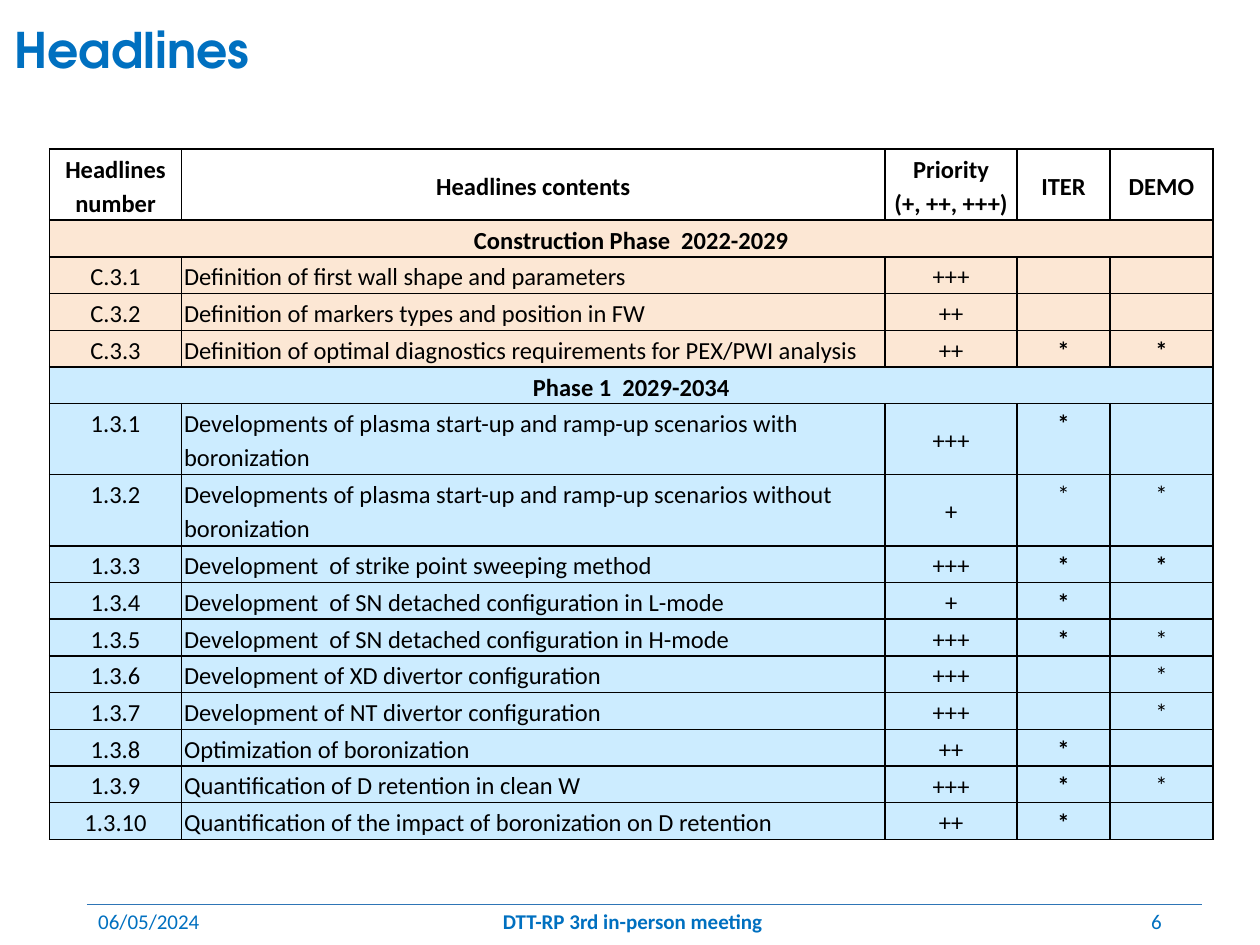
import pptx
import pptx.dml.color
import pptx.enum.shapes
import pptx.enum.text
import pptx.oxml
import pptx.oxml.ns
import pptx.util

Pt = pptx.util.Pt
ALIGN = pptx.enum.text.PP_ALIGN
ANCHOR = pptx.enum.text.MSO_ANCHOR

BLUE = pptx.dml.color.RGBColor(0x00, 0x70, 0xC0)
RULE_BLUE = pptx.dml.color.RGBColor(0x2E, 0x75, 0xB6)
BLACK = pptx.dml.color.RGBColor(0x00, 0x00, 0x00)
PEACH = pptx.dml.color.RGBColor(0xFC, 0xE7, 0xD4)
SKY = pptx.dml.color.RGBColor(0xCC, 0xEC, 0xFF)


def set_values(target, values):
    for name, value in values.items():
        setattr(target, name, value)


def write(frame, text, color, font, paragraph_format):
    frame.text = text
    for paragraph in frame.paragraphs:
        set_values(paragraph, paragraph_format)
        for run in paragraph.runs:
            set_values(run.font, font)
            run.font.color.rgb = color
        if not paragraph.runs:
            paragraph._p.get_or_add_endParaRPr().set("sz", str(int(font["size"].pt * 100)))


deck = pptx.Presentation()
set_values(deck, {"slide_width": Pt(720), "slide_height": Pt(540)})
slide = deck.slides.add_slide(deck.slide_layouts[5])

footer_rule = slide.shapes.add_connector(
    pptx.enum.shapes.MSO_CONNECTOR.STRAIGHT, Pt(49.7), Pt(517), Pt(687), Pt(517))
footer_rule.line.width = Pt(0.5)
footer_rule.line.color.rgb = RULE_BLUE
footer_rule._element.spPr.append(pptx.oxml.parse_xml(
    f"<a:effectLst {pptx.oxml.ns.nsdecls('a')}/>"))

footers = [
    ("06/05/2024", 49, 162, ALIGN.LEFT, False),
    ("DTT-RP 3rd in-person meeting", 240, 243, ALIGN.CENTER, True),
    ("6", 509, 162, ALIGN.RIGHT, False),
]
for text, left, width, alignment, bold in footers:
    footer = slide.shapes.add_textbox(Pt(left), Pt(512), Pt(width), Pt(28.8))
    set_values(footer.text_frame, {"word_wrap": True, "vertical_anchor": ANCHOR.MIDDLE})
    write(footer.text_frame, text, BLUE,
          {"name": "Calibri", "size": Pt(12), "bold": bold}, {"alignment": alignment})

title = slide.shapes.title
set_values(title, {"left": Pt(1), "top": Pt(1.5), "width": Pt(561), "height": Pt(57)})
set_values(title.text_frame, {"word_wrap": True, "vertical_anchor": ANCHOR.MIDDLE})
write(title.text_frame, "Headlines", BLUE,
      {"name": "TeX Gyre Adventor", "size": Pt(28), "bold": True},
      {"alignment": ALIGN.LEFT, "line_spacing": 0.9})

header = ("Headlines\nnumber", "Headlines contents", "Priority\n(+, ++, +++)", "ITER", "DEMO")
phases = [
    ("Construction Phase  2022-2029", PEACH, [
        ("C.3.1", "Definition of first wall shape and parameters", "+++", "", ""),
        ("C.3.2", "Definition of markers types and position in FW", "++", "", ""),
        ("C.3.3", "Definition of optimal diagnostics requirements for PEX/PWI analysis",
         "++", "*", "*"),
    ]),
    ("Phase 1  2029-2034", SKY, [
        ("1.3.1", "Developments of plasma start-up and ramp-up scenarios with boronization",
         "+++", "*", ""),
        ("1.3.2", "Developments of plasma start-up and ramp-up scenarios without boronization",
         "+", "*", "*"),
        ("1.3.3", "Development  of strike point sweeping method", "+++", "*", "*"),
        ("1.3.4", "Development  of SN detached configuration in L-mode", "+", "*", ""),
        ("1.3.5", "Development  of SN detached configuration in H-mode", "+++", "*", "*"),
        ("1.3.6", "Development of XD divertor configuration", "+++", "", "*"),
        ("1.3.7", "Development of NT divertor configuration", "+++", "", "*"),
        ("1.3.8", "Optimization of boronization", "++", "*", ""),
        ("1.3.9", "Quantification of D retention in clean W", "+++", "*", "*"),
        ("1.3.10", "Quantification of the impact of boronization on D retention",
         "++", "*", ""),
    ]),
]
NUMBER, CONTENTS, PRIORITY, ITER, DEMO = range(5)
REGULAR_ITER = {"1.3.2"}
BOLD_DEMO = {"C.3.3", "1.3.3"}
TALL_ROWS = {header[NUMBER], "1.3.1", "1.3.2"}

rows = [(header, None, True)]
for phase, color, headlines in phases:
    rows.append(((phase, "", "", "", ""), color, True))
    rows += [(headline, color, False) for headline in headlines]

column_widths = [75.5, 402, 75.5, 53, 59]
row_heights = [40.6 if values[NUMBER] in TALL_ROWS else 21 for values, _, _ in rows]
headlines_table = slide.shapes.add_table(
    len(rows), len(column_widths), Pt(28.3), Pt(85.2),
    Pt(sum(column_widths)), Pt(sum(row_heights))).table
set_values(headlines_table, {"first_row": False, "horz_banding": False})
for column, width in zip(headlines_table.columns, column_widths):
    column.width = Pt(width)

cell_margins = {"margin_left": Pt(1.4), "margin_right": Pt(1.4),
                "margin_top": Pt(0.7), "margin_bottom": Pt(0.7)}
for row, (values, color, is_heading) in enumerate(rows):
    headlines_table.rows[row].height = Pt(row_heights[row])
    if is_heading and color:
        headlines_table.cell(row, NUMBER).merge(headlines_table.cell(row, DEMO))
    for column, text in enumerate(values):
        cell = headlines_table.cell(row, column)
        centred = is_heading or column == PRIORITY
        set_values(cell, {**cell_margins,
                          "vertical_anchor": ANCHOR.MIDDLE if centred else ANCHOR.TOP})
        bold = (is_heading
                or column == ITER and values[NUMBER] not in REGULAR_ITER
                or column == DEMO and values[NUMBER] in BOLD_DEMO)
        left_aligned = column == CONTENTS and not is_heading
        write(cell.text_frame, text, BLACK,
              {"name": "Calibri", "size": Pt(14), "bold": bold},
              {"alignment": ALIGN.LEFT if left_aligned else ALIGN.CENTER,
               "line_spacing": 1.15})
        properties = cell._tc.get_or_add_tcPr()
        for edge in ("lnL", "lnR", "lnT", "lnB"):
            properties.append(pptx.oxml.parse_xml(
                f"<a:{edge} {pptx.oxml.ns.nsdecls('a')} w='{Pt(1)}'><a:solidFill>"
                f"<a:srgbClr val='{BLACK}'/></a:solidFill></a:{edge}>"))
        if color:
            cell.fill.solid()
            cell.fill.fore_color.rgb = color
        else:
            cell.fill.background()

deck.save("out.pptx")
